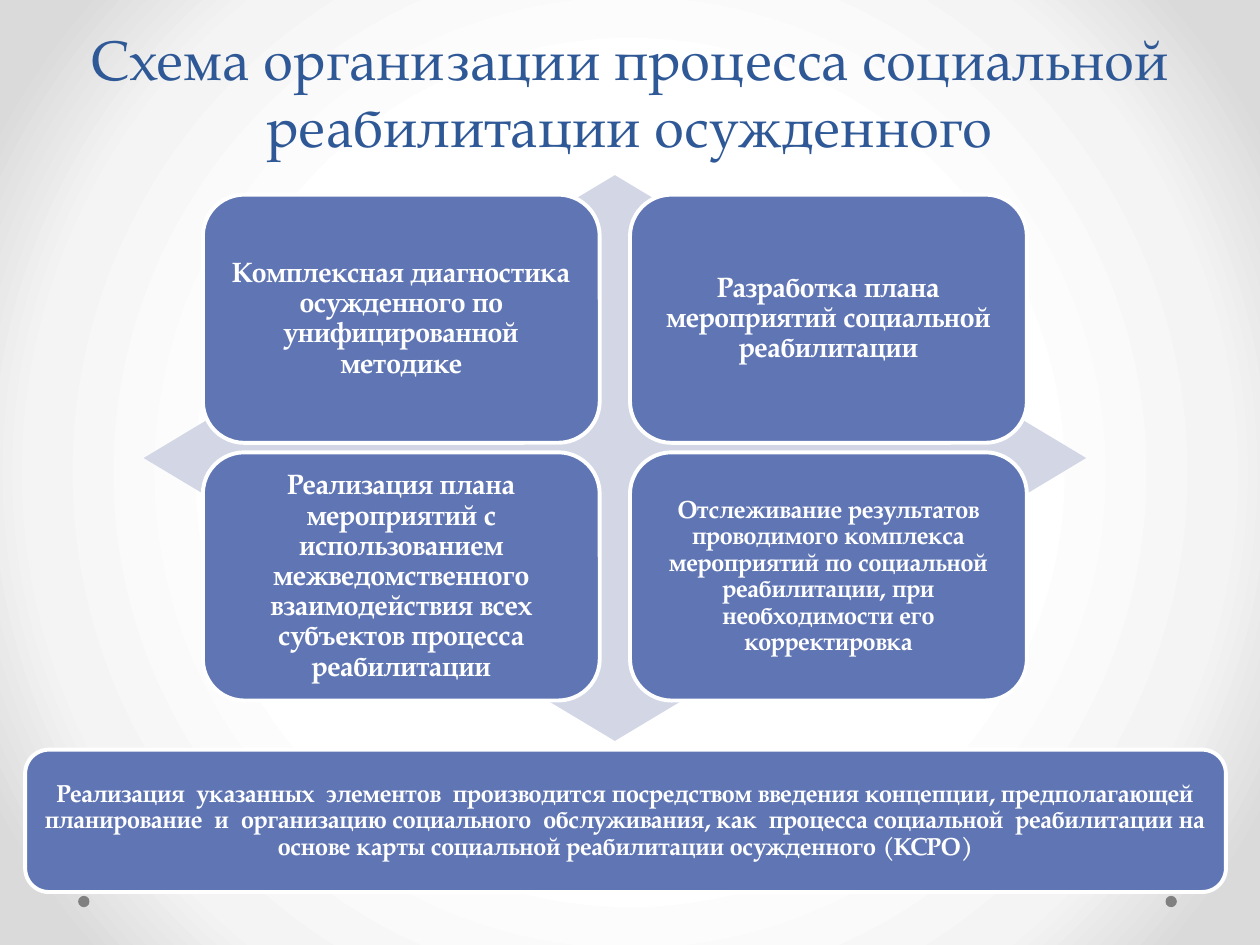
import pptx
import pptx.dml.color
import pptx.enum.shapes
import pptx.enum.text
import pptx.oxml
import pptx.oxml.ns
import pptx.util

SHAPE = pptx.enum.shapes.MSO_SHAPE
ANCHOR = pptx.enum.text.MSO_ANCHOR
COLUMNS, ROWS = 100, 75

STEPS = [
    ("Комплексная диагностика осужденного по унифицированной методике", 16),
    ("Разработка плана мероприятий социальной реабилитации", 16),
    ("Реализация плана мероприятий с использованием межведомственного "
     "взаимодействия всех субъектов процесса реабилитации", 16),
    ("Отслеживание результатов проводимого комплекса мероприятий по социальной "
     "реабилитации, при необходимости его корректировка", 14),
]
SUMMARY = (
    "Реализация  указанных  элементов  производится посредством введения концепции, "
    "предполагающей планирование  и  организацию социального  обслуживания, как  "
    "процесса социальной  реабилитации на основе карты социальной реабилитации "
    "осужденного (КСРО)"
)


def color(value):
    return pptx.dml.color.RGBColor.from_string(value)


class Board:
    """Style and current slide; places are (column, row, columns wide, rows high)."""
    font = "TeX Gyre Pagella"
    title_color, box_color, white = "2F5897", "6076B4", "FFFFFF"
    diamond_color, dot_color = "D2D6E5", "808080"

    def __init__(self, deck):
        self.deck = deck
        self.page = deck.slides.add_slide(deck.slide_layouts[6])

    def place(self, column, row, width, height):
        across = self.deck.slide_width / COLUMNS
        down = self.deck.slide_height / ROWS
        return [round(length) for length in
                (column * across, row * down, width * across, height * down)]

    def glow(self, stops):
        """Fill the background with a circular gradient of (percent, colour) stops."""
        fill = self.page.background.fill
        fill.gradient()
        old = self.page.element.find(".//" + pptx.oxml.ns.qn("a:gradFill"))
        marks = "".join(
            f'<a:gs pos="{percent * 1000}"><a:srgbClr val="{value}"/></a:gs>'
            for percent, value in stops)
        new = pptx.oxml.parse_xml(
            f'<a:gradFill {pptx.oxml.ns.nsdecls("a")} rotWithShape="1">'
            f'<a:gsLst>{marks}</a:gsLst><a:path path="circle">'
            '<a:fillToRect l="50000" t="50000" r="50000" b="50000"/>'
            '</a:path></a:gradFill>')
        old.getparent().replace(old, new)

    def shape(self, kind, place, fill):
        shape = self.page.shapes.add_shape(kind, *self.place(*place))
        shape.shadow.inherit = False
        shape.fill.solid()
        shape.fill.fore_color.rgb = color(fill)
        shape.line.fill.background()
        return shape

    def set_text(self, shape, text, size, value, anchor, bold=False):
        frame = shape.text_frame
        frame.word_wrap = True
        frame.vertical_anchor = anchor
        para = frame.paragraphs[0]
        para.text = text
        para.alignment = pptx.enum.text.PP_ALIGN.CENTER
        para.font.name = self.font
        para.font.size = pptx.util.Pt(size)
        para.font.bold = bold
        para.font.color.rgb = color(value)
        return frame

    def title(self, place, text):
        box = self.page.shapes.add_textbox(*self.place(*place))
        self.set_text(box, text, 32, self.title_color, ANCHOR.BOTTOM)

    def card(self, place, text, size):
        card = self.shape(SHAPE.ROUNDED_RECTANGLE, place, self.box_color)
        card.line.color.rgb = color(self.white)
        card.line.width = pptx.util.Pt(2.25)
        frame = self.set_text(card, text, size, self.white, ANCHOR.MIDDLE, bold=True)
        frame.paragraphs[0].line_spacing = 0.9
        inset = pptx.util.Inches(0.07 if size == 16 else 0.06)
        frame.margin_left = frame.margin_right = inset
        frame.margin_top = frame.margin_bottom = inset


def main():
    deck = pptx.Presentation()
    deck.slide_width = pptx.util.Inches(10)
    deck.slide_height = pptx.util.Inches(7.5)
    board = Board(deck)

    board.glow([(50, "FFFFFF"), (76, "F4F4F4"), (92, "DADADA")])
    for column in (6.2, 92.5):
        board.shape(SHAPE.OVAL, (column, 71.1, 0.9, 0.9), board.dot_color)
    board.title((5, 2.9, 90, 10.2),
                "Схема организации процесса социальной реабилитации осужденного")
    board.shape(SHAPE.DIAMOND, (11.4, 13.9, 74.8, 44.9), board.diamond_color)
    for index, (text, size) in enumerate(STEPS):
        row, column = divmod(index, 2)
        board.card((16.1 + 33.9 * column, 15.45 + 20.45 * row, 31.5, 19.7), text, size)
    board.card((2, 59.5, 95.3, 11.3), SUMMARY, 14)

    deck.save("out.pptx")


if __name__ == "__main__":
    main()
